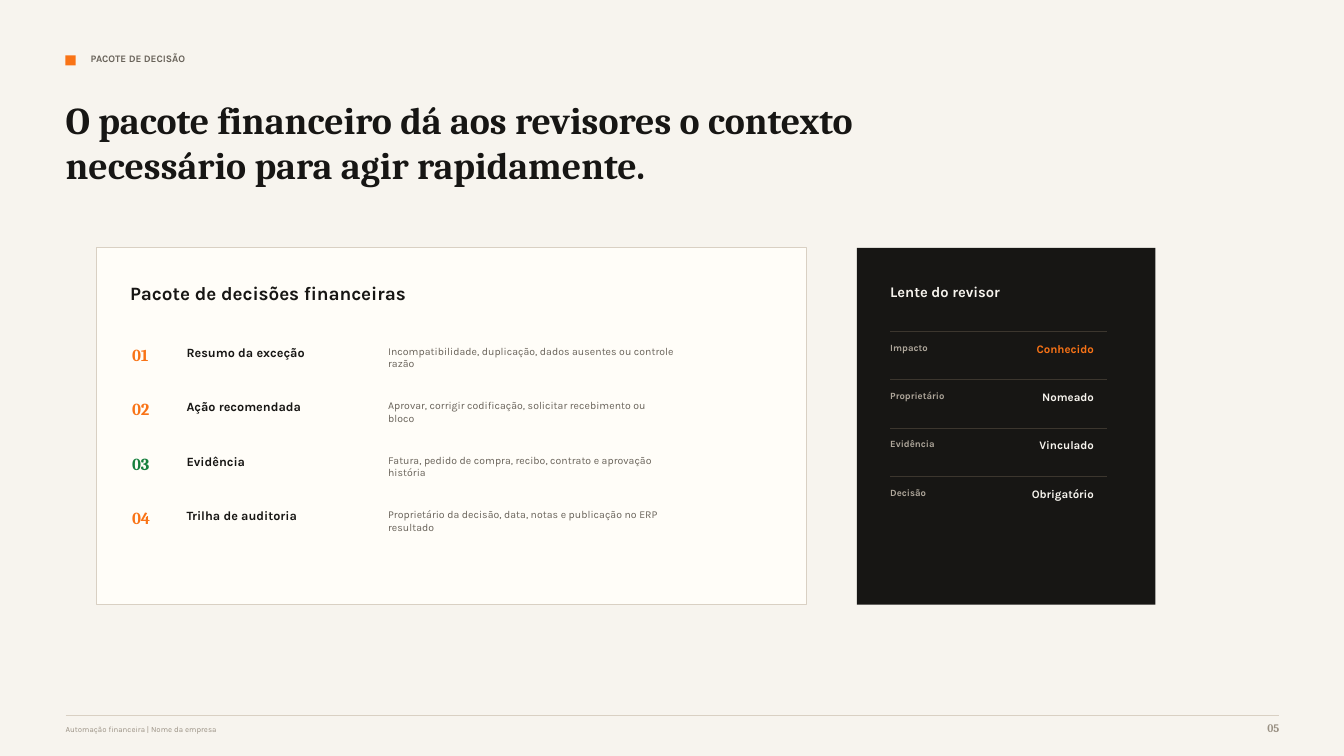
"""Build the decision packet slide."""
import pptx
import pptx.dml.color
import pptx.enum.shapes
import pptx.enum.text
import pptx.oxml
import pptx.oxml.ns
import pptx.util

Inches = pptx.util.Inches
RGBColor = pptx.dml.color.RGBColor
ALIGN = pptx.enum.text.PP_ALIGN

CREAM = RGBColor(0xF7, 0xF4, 0xEE)
IVORY = RGBColor(0xFF, 0xFD, 0xF8)
INK = RGBColor(0x17, 0x16, 0x14)
ORANGE = RGBColor(0xF9, 0x73, 0x16)
GREEN = RGBColor(0x15, 0x80, 0x3D)
BROWN = RGBColor(0x69, 0x63, 0x5A)
SAND = RGBColor(0xD9, 0xD0, 0xC3)
UMBER = RGBColor(0x3C, 0x36, 0x2E)
STONE = RGBColor(0xAF, 0xA7, 0x9B)
TAUPE = RGBColor(0x9A, 0x91, 0x84)

SERIF, SANS = "Cambria", "Karla"


def text_format(name, size, bold=True):
    """Return the font values of one text style."""
    return {"name": name, "size": pptx.util.Pt(size), "bold": bold}


STYLES = {
    "eyebrow": text_format(SANS, 7.1),
    "title": text_format(SERIF, 27),
    "packet heading": text_format(SANS, 13.5),
    "number": text_format(SERIF, 12),
    "item": text_format(SANS, 9),
    "detail": text_format(SANS, 7.5, False),
    "lens heading": text_format(SANS, 10.5),
    "lens label": text_format(SANS, 6.8),
    "lens value": text_format(SANS, 8.2),
    "footer": text_format(SANS, 5.6, False),
    "page number": text_format(SERIF, 8.2),
}

PACKET_ITEMS = [
    ("01", ORANGE, "Resumo da exceção",
     ["Incompatibilidade, duplicação, dados ausentes ou controle", "razão"]),
    ("02", ORANGE, "Ação recomendada",
     ["Aprovar, corrigir codificação, solicitar recebimento ou", "bloco"]),
    ("03", GREEN, "Evidência",
     ["Fatura, pedido de compra, recibo, contrato e aprovação", "história"]),
    ("04", ORANGE, "Trilha de auditoria",
     ["Proprietário da decisão, data, notas e publicação no ERP", "resultado"]),
]

LENS_ROWS = [
    ("Impacto", "Conhecido", ORANGE),
    ("Proprietário", "Nomeado", CREAM),
    ("Evidência", "Vinculado", CREAM),
    ("Decisão", "Obrigatório", CREAM),
]


def fill_text(box, lines, style, color, align=ALIGN.LEFT):
    """Write one paragraph per line in a box without margins."""
    frame = box.text_frame
    layout = {
        "margin_left": 0, "margin_right": 0, "margin_top": 0, "margin_bottom": 0,
        "word_wrap": True,
        "auto_size": pptx.enum.text.MSO_AUTO_SIZE.NONE,
        "vertical_anchor": pptx.enum.text.MSO_ANCHOR.TOP,
    }
    for name, value in layout.items():
        setattr(frame, name, value)
    for index, line in enumerate(lines):
        para = frame.add_paragraph() if index else frame.paragraphs[0]
        para.alignment = align
        span = para.add_run()
        span.text = line
        for name, value in STYLES[style].items():
            setattr(span.font, name, value)
        span.font.color.rgb = color


def add_text(page, place, lines, style, color, align=ALIGN.LEFT):
    """Add a text box at left, top, width, height in inches."""
    box = page.shapes.add_textbox(*map(Inches, place))
    fill_text(box, lines, style, color, align)


def add_title(page, place, text):
    """Move the title placeholder and write the headline in it."""
    title = page.shapes.title
    title.left, title.top, title.width, title.height = map(Inches, place)
    fill_text(title, [text], "title", INK)


def add_panel(page, place, fill, outline=None):
    """Add a filled rectangle with an optional thin outline."""
    kind = pptx.enum.shapes.MSO_SHAPE.RECTANGLE
    panel = page.shapes.add_shape(kind, *map(Inches, place))
    panel.shadow.inherit = False
    panel.fill.solid()
    panel.fill.fore_color.rgb = fill
    if outline is None:
        panel.line.fill.background()
    else:
        panel.line.color.rgb = outline
        panel.line.width = pptx.util.Pt(0.75)


def add_rule(page, left, top, width, color):
    """Add a thin horizontal line."""
    kind = pptx.enum.shapes.MSO_CONNECTOR.STRAIGHT
    ends = map(Inches, (left, top, left + width, top))
    rule = page.shapes.add_connector(kind, *ends)
    rule.line.color.rgb = color
    rule.line.width = pptx.util.Pt(0.75)
    properties = rule._element.find(pptx.oxml.ns.qn("p:spPr"))
    properties.append(pptx.oxml.parse_xml(
        "<a:effectLst %s/>" % pptx.oxml.ns.nsdecls("a")))


def add_packet(page):
    """Add the light panel with the numbered packet items."""
    add_panel(page, (0.96, 2.46, 7.04, 3.54), IVORY, SAND)
    add_text(page, (1.29, 2.79, 3.12, 0.25),
             ["Pacote de decisões financeiras"], "packet heading", INK)
    for index, (number, color, item, detail) in enumerate(PACKET_ITEMS):
        top = 3.42 + 0.54 * index
        add_text(page, (1.31, top, 0.35, 0.25), [number], "number", color)
        add_text(page, (1.85, top, 1.81, 0.19), [item], "item", INK)
        add_text(page, (3.85, top, 3.33, 0.31), detail, "detail", BROWN)


def add_lens(page):
    """Add the dark panel with the reviewer's labels and values."""
    add_panel(page, (8.5, 2.46, 2.96, 3.54), INK)
    add_text(page, (8.83, 2.81, 1.67, 0.21),
             ["Lente do revisor"], "lens heading", CREAM)
    for index, (label, value, color) in enumerate(LENS_ROWS):
        top = 3.29 + 0.48 * index
        add_rule(page, 8.83, top, 2.15, UMBER)
        add_text(page, (8.83, top + 0.1, 0.96, 0.17), [label], "lens label", STONE)
        add_text(page, (10, top + 0.1, 0.85, 0.17), [value], "lens value",
                 color, ALIGN.RIGHT)


def add_footer(page):
    """Add the footer line, source name and page number."""
    add_rule(page, 0.65, 7.1, 12.04, SAND)
    add_text(page, (0.65, 7.19, 7.92, 0.15),
             ["Automação financeira | Nome da empresa"], "footer", TAUPE)
    add_text(page, (12.19, 7.15, 0.5, 0.19), ["05"], "page number",
             TAUPE, ALIGN.RIGHT)


def main():
    """Build and save the deck."""
    deck = pptx.Presentation()
    deck.slide_width, deck.slide_height = Inches(13.33), Inches(7.5)
    page = deck.slides.add_slide(deck.slide_layouts.get_by_name("Title Only"))
    page.background.fill.solid()
    page.background.fill.fore_color.rgb = CREAM
    add_panel(page, (0.65, 0.55, 0.1, 0.1), ORANGE)
    add_text(page, (0.9, 0.52, 5.83, 0.19), ["PACOTE DE DECISÃO"], "eyebrow", BROWN)
    add_title(page, (0.65, 0.96, 9.38, 1.02),
              "O pacote financeiro dá aos revisores o contexto "
              "necessário para agir rapidamente.")
    add_packet(page)
    add_lens(page)
    add_footer(page)
    deck.save("out.pptx")


if __name__ == "__main__":
    main()
